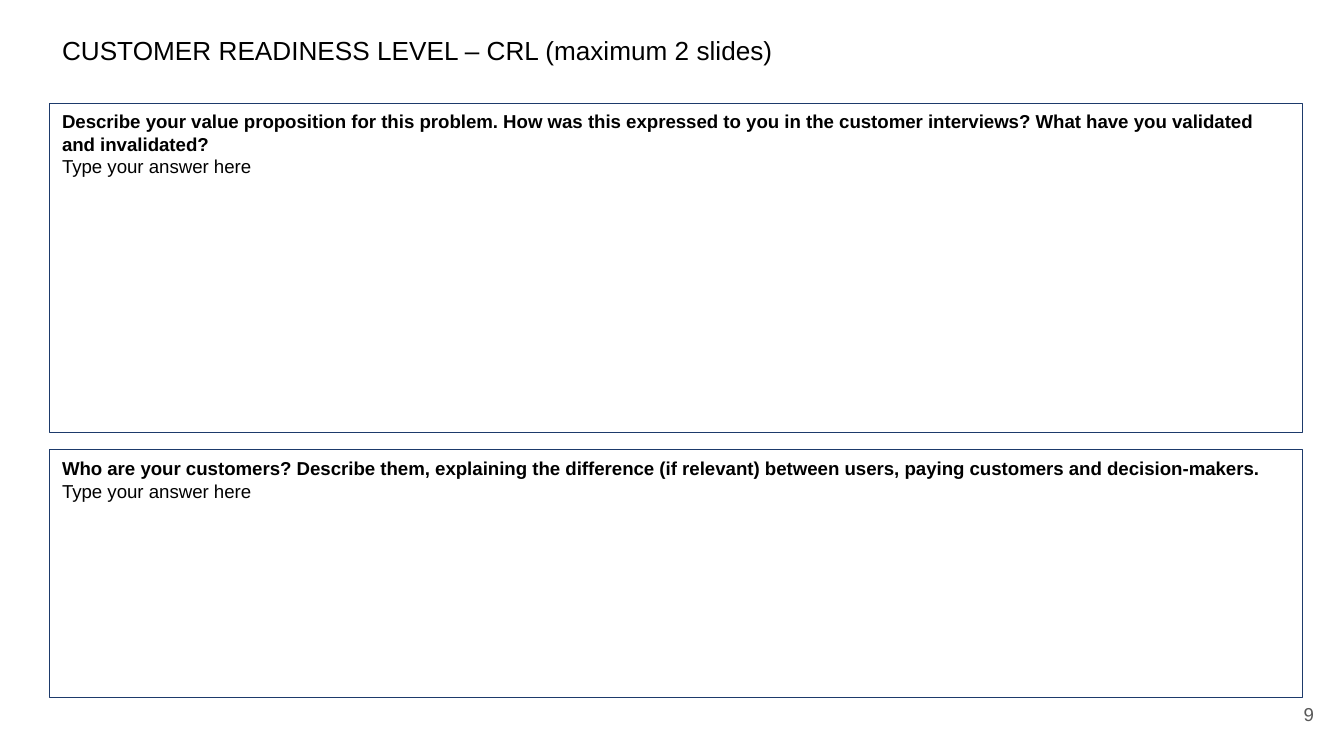
from pptx import Presentation
from pptx.dml.color import RGBColor
from pptx.enum.shapes import MSO_SHAPE
from pptx.enum.text import MSO_ANCHOR, MSO_AUTO_SIZE, PP_ALIGN
from pptx.util import Pt

RECT = MSO_SHAPE.RECTANGLE
TOP, MIDDLE = MSO_ANCHOR.TOP, MSO_ANCHOR.MIDDLE
LEFT, RIGHT = PP_ALIGN.LEFT, PP_ALIGN.RIGHT
NO_FIT = MSO_AUTO_SIZE.NONE

# Content
TITLE = "CUSTOMER READINESS LEVEL – CRL (maximum 2 slides)"
PAGE_NUMBER = "9"
ANSWER = "Type your answer here"
QUESTIONS = [  # question, box height in px
    ("Describe your value proposition for this problem. How was this expressed "
     "to you in the customer interviews? What have you validated and invalidated?", 330),
    ("Who are your customers? Describe them, explaining the difference (if relevant) "
     "between users, paying customers and decision-makers.", 248),
]
COLORS = {"text": "000000", "number": "595959", "border": "1D3A6B"}
FONT = "Arial"

# Layout in px
SLIDE_W, SLIDE_H = 1344, 756
MARGIN_X, BOX_W = 49, 1254
BOX_TOP, BOX_GAP = 103, 17
INSET_X, INSET_Y = 13, 7


def px(n):
    return round(n * 914400 / 134.4)


def color(name):
    return RGBColor.from_string(COLORS[name])


def place(sp, x, y, w, h):
    sp.left, sp.top, sp.width, sp.height = px(x), px(y), px(w), px(h)


def format_frame(tf, inset_y, anchor=TOP):
    tf.word_wrap = True
    tf.auto_size = NO_FIT
    tf.vertical_anchor = anchor
    tf.margin_left = tf.margin_right = px(INSET_X)
    tf.margin_top = tf.margin_bottom = px(inset_y)


def write(p, text, size, align=LEFT, fill="text", bold=False):
    p.text = text
    p.alignment = align
    p.font.name, p.font.size, p.font.bold = FONT, Pt(size), bold
    p.font.color.rgb = color(fill)


prs = Presentation()
prs.slide_width, prs.slide_height = px(SLIDE_W), px(SLIDE_H)
s = prs.slides.add_slide(prs.slide_layouts[5])

# Title
title = s.shapes.title
place(title, MARGIN_X, 17, 992, 60)
format_frame(title.text_frame, INSET_X)
p = title.text_frame.paragraphs[0]
write(p, TITLE, 14)
p.line_spacing, p.space_after = 1.15, Pt(8)

# Page number
number = s.shapes.add_textbox(px(1246), px(685), px(81), px(58))
format_frame(number.text_frame, INSET_X, MIDDLE)
write(number.text_frame.paragraphs[0], PAGE_NUMBER, 10, RIGHT, "number")

# Question boxes
y = BOX_TOP
for question, height in QUESTIONS:
    box = s.shapes.add_shape(RECT, px(MARGIN_X), px(y), px(BOX_W), px(height))
    box.shadow.inherit = False
    box.fill.background()
    box.line.color.rgb = color("border")
    box.line.width = Pt(0.5)
    tf = box.text_frame
    format_frame(tf, INSET_Y)
    write(tf.paragraphs[0], question, 10, bold=True)
    write(tf.add_paragraph(), ANSWER, 10)
    y += height + BOX_GAP

prs.save("out.pptx")
